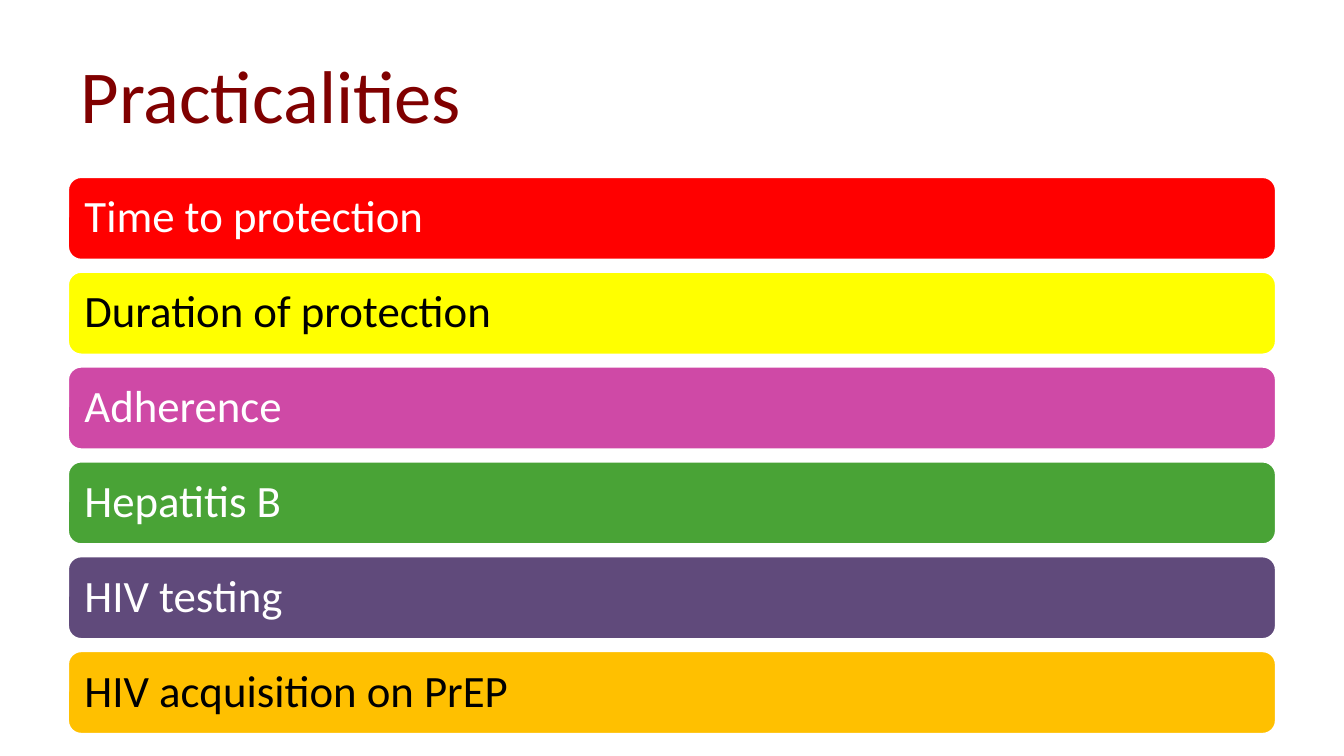
from pptx import Presentation
from pptx.dml.color import RGBColor
from pptx.enum import shapes, text
from pptx.util import Pt

# Content
WHITE = RGBColor(0xFF, 0xFF, 0xFF)
BLACK = RGBColor(0x00, 0x00, 0x00)
MAROON = RGBColor(0x80, 0x00, 0x00)
RED = RGBColor(0xFF, 0x00, 0x00)
YELLOW = RGBColor(0xFF, 0xFF, 0x00)
PINK = RGBColor(0xCF, 0x49, 0xA6)
GREEN = RGBColor(0x49, 0xA3, 0x36)
PURPLE = RGBColor(0x60, 0x4A, 0x7B)
AMBER = RGBColor(0xFF, 0xC0, 0x00)

HEADING = "Practicalities"
TOPICS = [  # wording, bar colour, text colour
    ("Time to protection", RED, WHITE),
    ("Duration of protection", YELLOW, BLACK),
    ("Adherence", PINK, WHITE),
    ("Hepatitis B", GREEN, WHITE),
    ("HIV testing", PURPLE, WHITE),
    ("HIV acquisition on PrEP", AMBER, BLACK),
]

# Layout in points
LEFT, WIDTH = 36, 648
FIRST_TOP, BAR_HEIGHT, BAR_STEP = 94.4, 45.2, 50.8


def write(shape, wording, size, color, inset_y):
    frame = shape.text_frame
    frame.text = wording
    frame.word_wrap = True
    frame.auto_size = text.MSO_AUTO_SIZE.NONE
    frame.vertical_anchor = text.MSO_ANCHOR.MIDDLE
    frame.margin_left = frame.margin_right = Pt(7.2)
    frame.margin_top = frame.margin_bottom = Pt(inset_y)
    paragraph = frame.paragraphs[0]
    paragraph.alignment = text.PP_ALIGN.LEFT
    font = paragraph.runs[0].font
    font.name, font.size, font.color.rgb = "Calibri", Pt(size), color
    return paragraph


presentation = Presentation()
presentation.slide_width, presentation.slide_height = Pt(720), Pt(405)
slide = presentation.slides.add_slide(presentation.slide_layouts[5])

# Title
title = slide.shapes.title
title.left, title.top, title.width, title.height = Pt(LEFT), Pt(16.2), Pt(WIDTH), Pt(67.5)
write(title, HEADING, 40, MAROON, 3.6)

# Topic bars
for row, (wording, fill, color) in enumerate(TOPICS):
    bar = slide.shapes.add_shape(
        shapes.MSO_SHAPE.ROUNDED_RECTANGLE,
        Pt(LEFT), Pt(FIRST_TOP + row * BAR_STEP), Pt(WIDTH), Pt(BAR_HEIGHT))
    bar.shadow.inherit = False
    bar.fill.solid()
    bar.fill.fore_color.rgb = fill
    bar.line.color.rgb = WHITE
    bar.line.width = Pt(2)
    write(bar, wording, 24, color, 7.2).line_spacing = 0.9

presentation.save("out.pptx")
